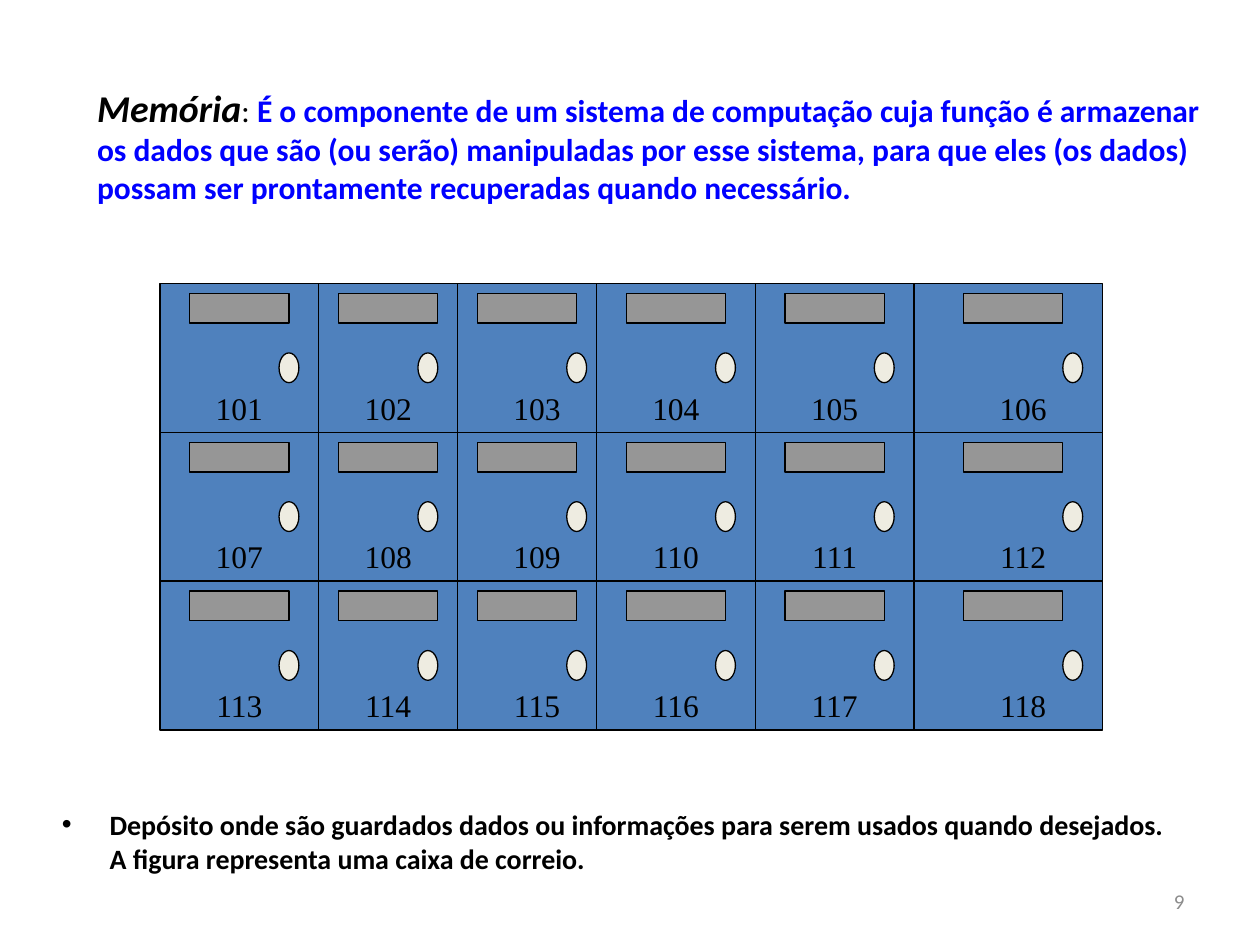
from dataclasses import dataclass

import pptx
import pptx.dml.color
import pptx.enum.shapes
import pptx.enum.text
import pptx.oxml.ns
import pptx.util
from lxml import etree

COLORS = {"black": "000000", "blue": "0000FF", "door": "4F81BD",
          "plate": "969696", "knob": "EEECE1", "number": "8C8C8C"}
RECT = pptx.enum.shapes.MSO_SHAPE.RECTANGLE
OVAL = pptx.enum.shapes.MSO_SHAPE.OVAL
ANCHOR = pptx.enum.text.MSO_ANCHOR
ALIGN = pptx.enum.text.PP_ALIGN

prs = pptx.Presentation()
prs.slide_width = pptx.util.Inches(10)
prs.slide_height = pptx.util.Inches(7.5)
W, H = prs.slide_width, prs.slide_height
UNIT = W / 127
LEFT, TOP = 0.127 * W, 0.3 * H
ROWS, ROW_HEIGHT = 3, 15
FIRST_NUMBER = 101


@dataclass
class Column:
    width: int
    plate: int
    label: int
    knob: int


COLUMNS = [Column(16, 3, 3, 12), Column(14, 2, 2, 10), Column(14, 2, 3, 11),
           Column(16, 3, 3, 12), Column(16, 3, 3, 12), Column(19, 5, 6, 15)]
STARTS = [sum(c.width for c in COLUMNS[:i]) for i in range(len(COLUMNS))]
TOTAL_WIDTH = sum(c.width for c in COLUMNS)


def rgb(name: str) -> pptx.dml.color.RGBColor:
    return pptx.dml.color.RGBColor.from_string(COLORS[name])


def set_font(font, name: str, size: float, color: str, bold: bool = False) -> None:
    font.name, font.size, font.bold = name, pptx.util.Pt(size), bold
    font.color.rgb = rgb(color)


def place(sp, left: float, top: float, width: float, height: float) -> None:
    sp.left, sp.top = round(left * W), round(top * H)
    sp.width, sp.height = round(width * W), round(height * H)


def grid_x(col: float) -> int:
    return round(LEFT + col * UNIT)


def grid_y(row: float) -> int:
    return round(TOP + row * UNIT)


def add_box(shapes, kind, col: int, row: int, width: int, height: int,
            color: str, outlined: bool = True):
    sp = shapes.add_shape(kind, grid_x(col), grid_y(row),
                          round(width * UNIT), round(height * UNIT))
    sp.shadow.inherit = False
    sp.fill.solid()
    sp.fill.fore_color.rgb = rgb(color)
    if outlined:
        sp.line.color.rgb = rgb("black")
        sp.line.width = pptx.util.Pt(0.75)
    else:
        sp.line.fill.background()
    return sp


def add_divider(shapes, col: int, row: int) -> None:
    line = shapes.add_connector(pptx.enum.shapes.MSO_CONNECTOR.STRAIGHT, grid_x(col),
                                grid_y(row), grid_x(col), grid_y(row + ROW_HEIGHT))
    line.line.color.rgb = rgb("black")
    line.line.width = pptx.util.Pt(0.75)
    etree.SubElement(line._element.spPr, pptx.oxml.ns.qn("a:effectLst"))


def add_label(shapes, col: int, row: int, text: str) -> None:
    tf = add_box(shapes, RECT, col, row, 10, 3, "door", outlined=False).text_frame
    tf.word_wrap = False
    tf.vertical_anchor = ANCHOR.MIDDLE
    p = tf.paragraphs[0]
    p.text, p.alignment = text, ALIGN.CENTER
    set_font(p.font, "Times New Roman", 18, "black")


def add_mailbox_row(slide, index: int) -> None:
    shapes = slide.shapes.add_group_shape().shapes
    row = index * ROW_HEIGHT
    add_box(shapes, RECT, 0, row, TOTAL_WIDTH, ROW_HEIGHT, "door")
    for start in STARTS[1:]:
        add_divider(shapes, start, row)
    for i, (start, c) in enumerate(zip(STARTS, COLUMNS)):
        number = FIRST_NUMBER + index * len(COLUMNS) + i
        add_box(shapes, RECT, start + c.plate, row + 1, 10, 3, "plate")
        add_label(shapes, start + c.label, row + 11, str(number))
        add_box(shapes, OVAL, start + c.knob, row + 7, 2, 3, "knob")


def add_title(slide) -> None:
    sp = slide.shapes.title
    place(sp, 0.067, 0.09, 0.9, 0.167)
    tf = sp.text_frame
    tf.auto_size = pptx.enum.text.MSO_AUTO_SIZE.NONE
    tf.vertical_anchor = ANCHOR.TOP
    tf.margin_top = 0
    p = tf.paragraphs[0]
    p.alignment = ALIGN.LEFT
    runs = [("Memória", 21.6, "black", True), (": ", 18, "black", False),
            ("É o componente de um sistema de computação cuja função é armazenar "
             "os dados que são (ou serão) manipuladas por esse sistema, para que eles "
             "(os dados) possam ser prontamente recuperadas quando necessário.",
             18, "blue", True)]
    for text, size, color, bold in runs:
        r = p.add_run()
        r.text = text
        set_font(r.font, "Calibri", size, color, bold)
    p.runs[0].font.italic = True


def add_body(slide) -> None:
    sp = slide.placeholders[1]
    place(sp, 0.039, 0.848, 0.9, 0.141)
    tf = sp.text_frame
    tf.auto_size = pptx.enum.text.MSO_AUTO_SIZE.NONE
    p = tf.paragraphs[0]
    p.text = ("Depósito onde são guardados dados ou informações para serem usados "
              "quando desejados. A figura representa uma caixa de correio.")
    set_font(p.font, "Calibri", 16, "black", True)
    indent = pptx.util.Inches(0.38)
    pPr = p._p.get_or_add_pPr()
    pPr.set("marL", str(indent))
    pPr.set("indent", str(-indent))


def add_slide_number(slide) -> None:
    sp = slide.shapes.add_textbox(0, 0, 0, 0)
    place(sp, 0.717, 0.927, 0.233, 0.053)
    tf = sp.text_frame
    tf.word_wrap = True
    tf.vertical_anchor = ANCHOR.MIDDLE
    p = tf.paragraphs[0]
    p.text, p.alignment = "9", ALIGN.RIGHT
    set_font(p.font, "Calibri", 12, "number")


def main() -> None:
    slide = prs.slides.add_slide(prs.slide_layouts[1])
    add_slide_number(slide)
    add_title(slide)
    for index in range(ROWS):
        add_mailbox_row(slide, index)
    add_body(slide)
    prs.save("out.pptx")


if __name__ == "__main__":
    main()
